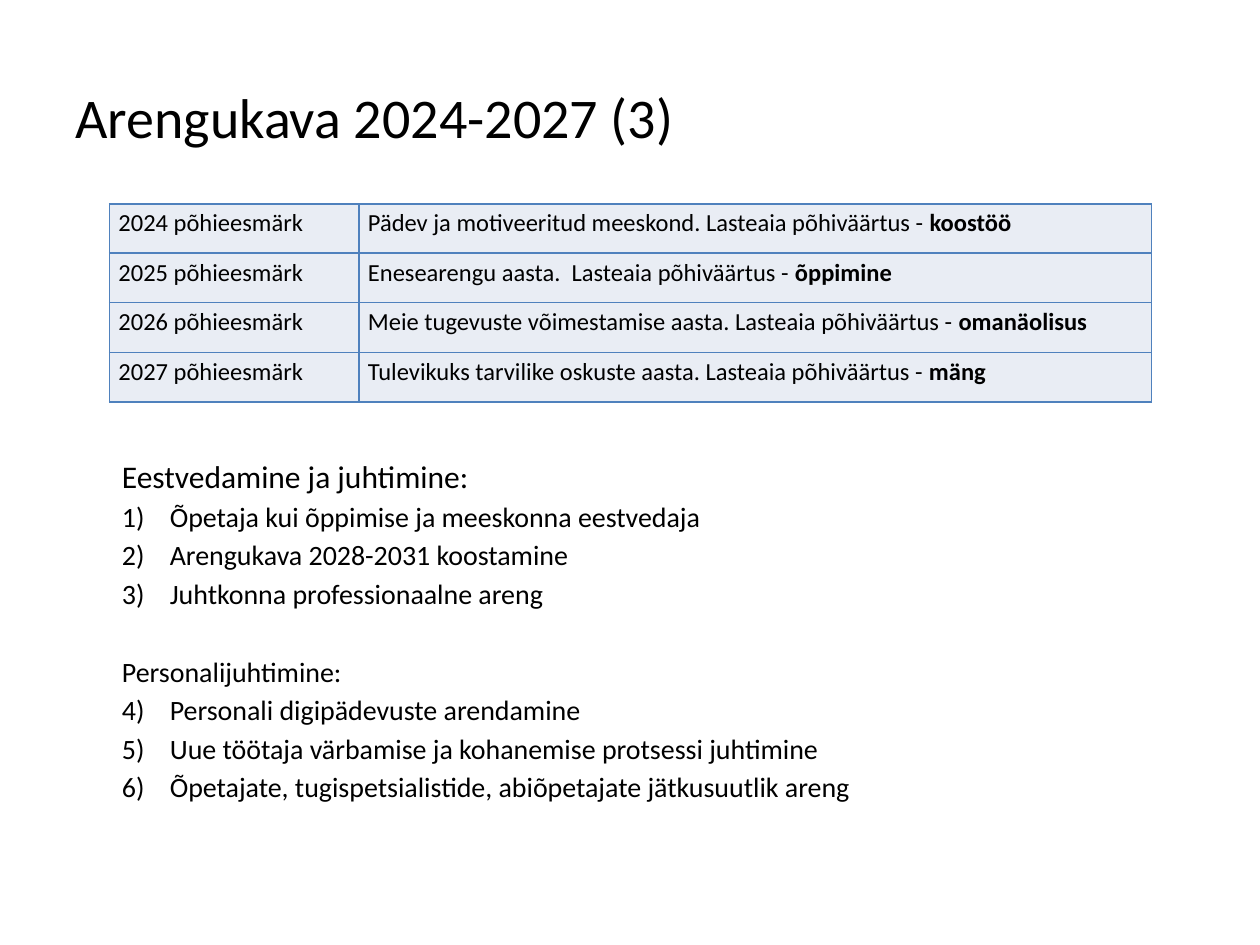
from lxml import etree
from pptx import Presentation
from pptx import util as u
from pptx.dml.color import RGBColor
from pptx.enum import text as t
from pptx.oxml.ns import qn

# Content
TITLE = "Arengukava 2024-2027 (3)"
GOALS = [
    ("2024 põhieesmärk", "Pädev ja motiveeritud meeskond. Lasteaia põhiväärtus - ", "koostöö"),
    ("2025 põhieesmärk", "Enesearengu aasta.  Lasteaia põhiväärtus - ", "õppimine"),
    ("2026 põhieesmärk", "Meie tugevuste võimestamise aasta. Lasteaia põhiväärtus - ", "omanäolisus"),
    ("2027 põhieesmärk", "Tulevikuks tarvilike oskuste aasta. Lasteaia põhiväärtus - ", "mäng"),
]
# Heading, heading size, numbered items
AREAS = [
    ("Eestvedamine ja juhtimine:", 18, [
        "Õpetaja kui õppimise ja meeskonna eestvedaja",
        "Arengukava 2028-2031 koostamine",
        "Juhtkonna professionaalne areng",
    ]),
    ("Personalijuhtimine:", 16, [
        "Personali digipädevuste arendamine",
        "Uue töötaja värbamise ja kohanemise protsessi juhtimine",
        "Õpetajate, tugispetsialistide, abiõpetajate jätkusuutlik areng",
    ]),
]

FONT = "Calibri"
BLACK = RGBColor(0x00, 0x00, 0x00)
BORDER = RGBColor(0x4F, 0x81, 0xBD)
CELL_FILL = RGBColor(0xE9, 0xED, 0xF4)
LEFT, WIDTH = 0.87, 8.27
COLUMNS = (1.98, 6.29)
ROWS = (0.39, 0.39, 0.4, 0.39)
INDENT = 0.38
AREA_GAP = 22.3  # one line of 16 pt text


def write(paragraph, text, size=16, bold_end="", align=t.PP_ALIGN.JUSTIFY,
          spacing=1.15, before=0, number=None, first=1):
    """Fill a paragraph; number marks a list item in a list starting at first."""
    paragraph.alignment = align
    paragraph.line_spacing = spacing
    paragraph.space_before = u.Pt(before)
    if number:
        props = paragraph._p.get_or_add_pPr()
        props.set("marL", str(u.Inches(INDENT)))
        props.set("indent", str(u.Inches(-INDENT)))
        etree.SubElement(props, qn("a:buFont"), typeface="+mj-lt")
        etree.SubElement(props, qn("a:buAutoNum"), type="arabicParenR", startAt=str(first))
    for part, bold in ((text, False), (bold_end, True)):
        if part:
            run = paragraph.add_run()
            run.text = part
            run.font.name = FONT
            run.font.size = u.Pt(size)
            run.font.bold = bold
            run.font.color.rgb = BLACK


def add_box(left, top, width, height, anchor):
    box = slide.shapes.add_textbox(*map(u.Inches, (left, top, width, height)))
    box.text_frame.word_wrap = True
    box.text_frame.vertical_anchor = anchor
    return box.text_frame


def style_cell(cell):
    props = cell._tc.get_or_add_tcPr()
    for side in ("lnL", "lnR", "lnT", "lnB"):
        line = etree.SubElement(props, qn(f"a:{side}"), w=str(u.Pt(1)))
        fill = etree.SubElement(line, qn("a:solidFill"))
        etree.SubElement(fill, qn("a:srgbClr"), val=str(BORDER))
    cell.fill.solid()
    cell.fill.fore_color.rgb = CELL_FILL
    cell.margin_left = cell.margin_right = u.Inches(0.07)
    cell.margin_top = cell.margin_bottom = 0


prs = Presentation()
prs.slide_width, prs.slide_height = u.Inches(10), u.Inches(7.5)
slide = prs.slides.add_slide(prs.slide_layouts[6])

# Title
title = add_box(0.5, 0.3, 9, 1.25, t.MSO_ANCHOR.MIDDLE)
write(title.paragraphs[0], TITLE, size=32, align=t.PP_ALIGN.LEFT, spacing=1.0)

# Yearly goals table
goals = slide.shapes.add_table(
    len(GOALS), len(COLUMNS), u.Inches(LEFT), u.Inches(1.62),
    u.Inches(WIDTH), u.Inches(sum(ROWS))).table
for column, width in zip(goals.columns, COLUMNS):
    column.width = u.Inches(width)
for row, height, (year, goal, value) in zip(goals.rows, ROWS, GOALS):
    row.height = u.Inches(height)
    for cell, text, bold_end in zip(row.cells, (year, goal), ("", value)):
        style_cell(cell)
        write(cell.text_frame.paragraphs[0], text, size=14, bold_end=bold_end)

# Areas with numbering that continues from one to the next
areas = add_box(LEFT, 3.53, WIDTH, 3.24, t.MSO_ANCHOR.TOP)
first = 1
for heading, size, items in AREAS:
    is_top = first == 1
    paragraph = areas.paragraphs[0] if is_top else areas.add_paragraph()
    write(paragraph, heading, size=size, before=0 if is_top else AREA_GAP)
    for number, item in enumerate(items, first):
        write(areas.add_paragraph(), item, number=number, first=first)
    first += len(items)

prs.save("out.pptx")
